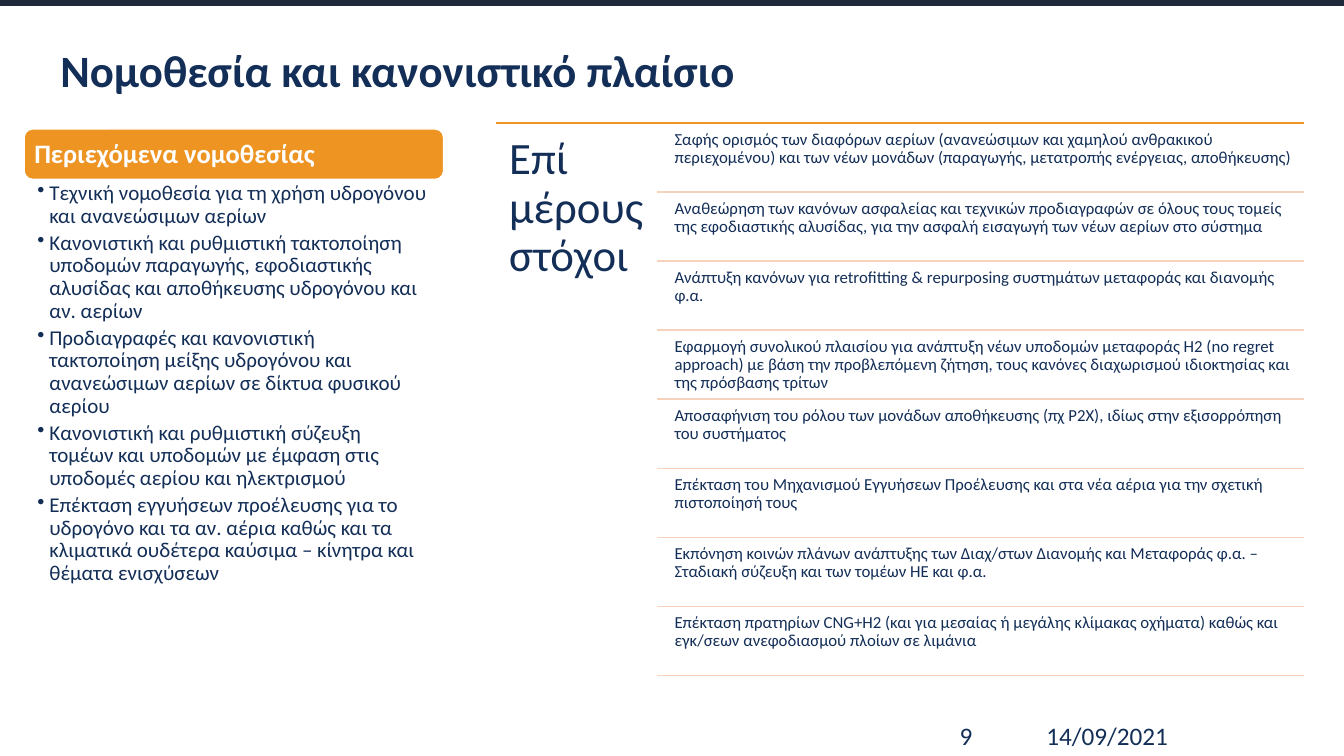
from dataclasses import dataclass

from lxml.etree import SubElement
from pptx import Presentation
from pptx.dml.color import RGBColor
from pptx.enum.shapes import MSO_CONNECTOR, MSO_SHAPE
from pptx.enum.text import MSO_ANCHOR
from pptx.oxml.ns import qn
from pptx.slide import Slide
from pptx.util import Inches, Pt

NAVY = RGBColor(0x13, 0x2E, 0x57)
DARK = RGBColor(0x1E, 0x2A, 0x39)
ORANGE = RGBColor(0xED, 0x94, 0x23)
PEACH = RGBColor(0xF6, 0xD2, 0xBD)
WHITE = RGBColor(0xFF, 0xFF, 0xFF)
FONT = "Calibri"
DEFAULT_INSETS = (0.1, 0.05, 0.1, 0.05)
BULLET_INDENT = 0.12

GOALS_TOP, GOALS_BOTTOM = 1.22, 6.70
GOALS_LEFT, GOAL_LINE_LEFT, GOALS_RIGHT = 4.92, 6.52, 12.93

CONTENTS = [
    "Τεχνική νομοθεσία για τη χρήση υδρογόνου και ανανεώσιμων αερίων",
    "Κανονιστική και ρυθμιστική τακτοποίηση υποδομών παραγωγής, εφοδιαστικής "
    "αλυσίδας και αποθήκευσης υδρογόνου και αν. αερίων",
    "Προδιαγραφές και κανονιστική τακτοποίηση μείξης υδρογόνου και "
    "ανανεώσιμων αερίων σε δίκτυα φυσικού αερίου",
    "Κανονιστική και ρυθμιστική σύζευξη τομέων και υποδομών με έμφαση στις "
    "υποδομές αερίου και ηλεκτρισμού",
    "Επέκταση εγγυήσεων προέλευσης για το υδρογόνο και τα αν. αέρια καθώς και "
    "τα κλιματικά ουδέτερα καύσιμα – κίνητρα και θέματα ενισχύσεων",
]

GOALS = [
    "Σαφής ορισμός των διαφόρων αερίων (ανανεώσιμων και χαμηλού ανθρακικού "
    "περιεχομένου) και των νέων μονάδων (παραγωγής, μετατροπής ενέργειας, αποθήκευσης)",
    "Αναθεώρηση των κανόνων ασφαλείας και τεχνικών προδιαγραφών σε όλους τους τομείς "
    "της εφοδιαστικής αλυσίδας, για την ασφαλή εισαγωγή των νέων αερίων στο σύστημα",
    "Ανάπτυξη κανόνων για retrofitting & repurposing συστημάτων μεταφοράς και "
    "διανομής φ.α.",
    "Εφαρμογή συνολικού πλαισίου για ανάπτυξη νέων υποδομών μεταφοράς Η2 (no regret "
    "approach) με βάση την προβλεπόμενη ζήτηση, τους κανόνες διαχωρισμού ιδιοκτησίας "
    "και της πρόσβασης τρίτων",
    "Αποσαφήνιση του ρόλου των μονάδων αποθήκευσης (πχ P2Χ), ιδίως στην εξισορρόπηση "
    "του συστήματος",
    "Επέκταση του Μηχανισμού Εγγυήσεων Προέλευσης και στα νέα αέρια για την σχετική "
    "πιστοποίησή τους",
    "Εκπόνηση κοινών πλάνων ανάπτυξης των Διαχ/στων Διανομής και Μεταφοράς φ.α. – "
    "Σταδιακή σύζευξη και των τομέων ΗΕ και φ.α.",
    "Επέκταση πρατηρίων CNG+Η2 (και για μεσαίας ή μεγάλης κλίμακας οχήματα) καθώς και "
    "εγκ/σεων ανεφοδιασμού πλοίων σε λιμάνια",
]


@dataclass(frozen=True)
class Area:
    left: float
    top: float
    width: float
    height: float

    def lengths(self) -> tuple[int, int, int, int]:
        return (Inches(self.left), Inches(self.top),
                Inches(self.width), Inches(self.height))


def add_text(page: Slide, area: Area, *texts: str, size: float,
             color: RGBColor = NAVY, bold: bool = False, bulleted: bool = False,
             anchor: MSO_ANCHOR = MSO_ANCHOR.TOP, line_spacing: float = 0.9,
             space_after: float = 0,
             insets: tuple[float, float, float, float] = DEFAULT_INSETS) -> None:
    """Add a wrapping text box with one paragraph for each text."""
    frame = page.shapes.add_textbox(*area.lengths()).text_frame
    frame.word_wrap = True
    frame.vertical_anchor = anchor
    (frame.margin_left, frame.margin_top,
     frame.margin_right, frame.margin_bottom) = map(Inches, insets)
    for index, text in enumerate(texts):
        para = frame.add_paragraph() if index else frame.paragraphs[0]
        para.line_spacing = line_spacing
        para.space_after = Pt(space_after)
        span = para.add_run()
        span.text = text
        span.font.name = FONT
        span.font.size = Pt(size)
        span.font.bold = bold
        span.font.color.rgb = color
        if bulleted:
            properties = para._p.get_or_add_pPr()
            properties.set("marL", str(Inches(BULLET_INDENT)))
            properties.set("indent", str(-Inches(BULLET_INDENT)))
            SubElement(properties, qn("a:buChar")).set("char", "•")


def add_block(page: Slide, kind: MSO_SHAPE, area: Area,
              fill: RGBColor, outline: RGBColor) -> None:
    block = page.shapes.add_shape(kind, *area.lengths())
    block.shadow.inherit = False
    block.fill.solid()
    block.fill.fore_color.rgb = fill
    block.line.color.rgb = outline
    block.line.width = Pt(1)


def add_rule(page: Slide, left: float, top: float, color: RGBColor) -> None:
    """Draw a horizontal line from left to the right edge of the goals."""
    rule = page.shapes.add_connector(MSO_CONNECTOR.STRAIGHT, Inches(left), Inches(top),
                                     Inches(GOALS_RIGHT), Inches(top))
    rule.line.color.rgb = color
    rule.line.width = Pt(1)
    SubElement(rule._element.spPr, qn("a:effectLst"))


def add_contents(page: Slide) -> None:
    add_block(page, MSO_SHAPE.ROUNDED_RECTANGLE, Area(0.24, 1.28, 4.16, 0.5),
              ORANGE, WHITE)
    add_text(page, Area(0.26, 1.31, 4.11, 0.45), "Περιεχόμενα νομοθεσίας", size=19,
             color=WHITE, bold=True, anchor=MSO_ANCHOR.MIDDLE, insets=(0.08,) * 4)
    add_text(page, Area(0.24, 1.78, 4.16, 4.22), *CONTENTS, size=15, bulleted=True,
             space_after=3, insets=(0.13, 0.03, 0.15, 0.03))


def add_goals(page: Slide) -> None:
    add_rule(page, GOALS_LEFT, GOALS_TOP, ORANGE)
    add_text(page, Area(GOALS_LEFT, GOALS_TOP, GOAL_LINE_LEFT - GOALS_LEFT, 5.51),
             "Επί μέρους στόχοι", size=32, insets=(0.13,) * 4)
    pitch = (GOALS_BOTTOM - GOALS_TOP) / len(GOALS)
    for index, goal in enumerate(GOALS):
        top = GOALS_TOP + index * pitch
        add_text(page, Area(6.64, top + 0.03, 6.29, 0.65), goal, size=12,
                 insets=(0.05,) * 4)
        add_rule(page, GOAL_LINE_LEFT, top + pitch, PEACH)


def main() -> None:
    deck = Presentation()
    deck.slide_width, deck.slide_height = Inches(13.33), Inches(7.5)
    page = deck.slides.add_slide(deck.slide_layouts[6])
    add_block(page, MSO_SHAPE.RECTANGLE, Area(0, 0, 13.33, 0.05), DARK, DARK)
    add_text(page, Area(0.5, 0.34, 11.92, 0.77), "Νομοθεσία και κανονιστικό πλαίσιο",
             size=32, bold=True, anchor=MSO_ANCHOR.MIDDLE)
    add_contents(page)
    add_goals(page)
    for left, text in ((10.28, "14/09/2021"), (9.42, "9")):
        add_text(page, Area(left, 7.1, 3, 0.4), text, size=18, line_spacing=1.0)
    deck.save("out.pptx")


if __name__ == "__main__":
    main()
